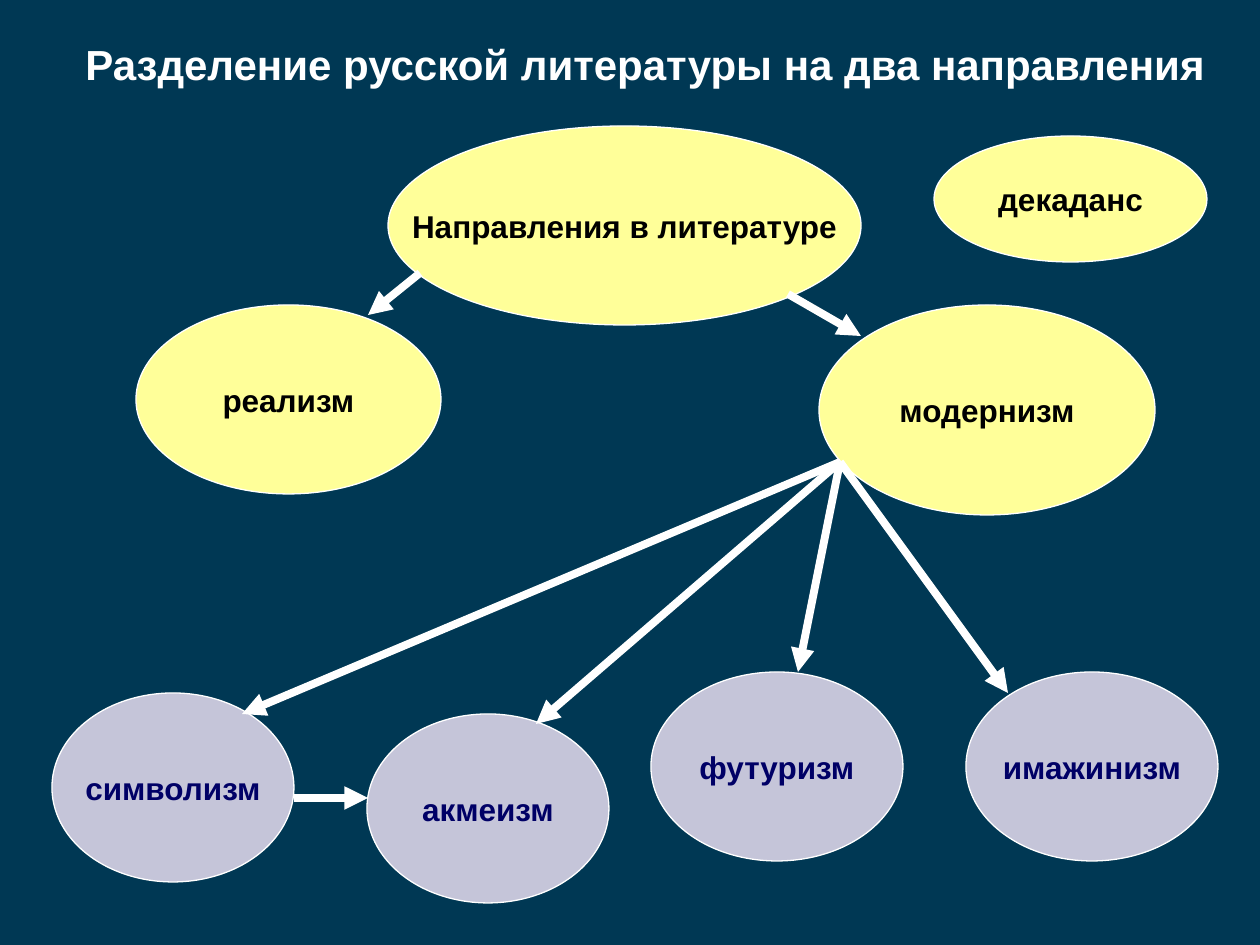
from pptx import Presentation
from pptx.dml.color import RGBColor
from pptx.enum.shapes import MSO_CONNECTOR, MSO_SHAPE
from pptx.enum.text import MSO_ANCHOR, PP_ALIGN
from pptx.oxml.ns import qn
from pptx.util import Emu, Pt
from lxml import etree

ELLIPSE = MSO_SHAPE.OVAL
STRAIGHT = MSO_CONNECTOR.STRAIGHT
MIDDLE = MSO_ANCHOR.MIDDLE
CENTER = PP_ALIGN.CENTER

EMU_PER_PX = 914400 / 126
FONT = "Arial"
COLORS = {
    "background": "003854",
    "white": "FFFFFF",
    "black": "000000",
    "yellow": "FFFF99",
    "lavender": "C5C5D9",
    "navy": "000066",
}

TITLE = "Разделение русской литературы на два направления"
DIRECTIONS = [
    ("Направления в литературе", 388, 126, 473, 199),
    ("реализм", 136, 305, 305, 189),
    ("модернизм", 819, 305, 336, 210),
]
MOVEMENTS = [
    ("символизм", 52, 693, 242, 189),
    ("акмеизм", 367, 714, 242, 189),
    ("футуризм", 651, 672, 252, 189),
    ("имажинизм", 966, 672, 252, 189),
]
DECADENCE = ("декаданс", 934, 136, 273, 126)

MODERNISM_EXIT = (840, 462)
MOVEMENT_ENTRIES = [(242, 714), (536, 724), (798, 672), (1008, 693)]
ARROWS = [
    ((420, 273), (368, 315)),
    ((788, 294), (861, 336)),
    *[(MODERNISM_EXIT, entry) for entry in MOVEMENT_ENTRIES],
    ((294, 798), (368, 798)),
]


def px(*lengths):
    return [Emu(round(length * EMU_PER_PX)) for length in lengths]


def color(name):
    return RGBColor.from_string(COLORS[name])


def set_text(shape, text, size, color_name):
    frame = shape.text_frame
    frame.word_wrap = False
    frame.text = text
    font = frame.paragraphs[0].runs[0].font
    font.name = FONT
    font.size = Pt(size)
    font.bold = True
    font.color.rgb = color(color_name)


def add_title(slide):
    box = slide.shapes.add_textbox(*px(73, 32, 1149, 113))
    set_text(box, TITLE, 24, "white")


def add_ellipse(slide, text, left, top, width, height, fill, text_color):
    shape = slide.shapes.add_shape(ELLIPSE, *px(left, top, width, height))
    shape.shadow.inherit = False
    shape.fill.solid()
    shape.fill.fore_color.rgb = color(fill)
    shape.line.color.rgb = color("white")
    shape.line.width = Pt(0.75)
    set_text(shape, text, 18, text_color)
    shape.text_frame.vertical_anchor = MIDDLE
    shape.text_frame.paragraphs[0].alignment = CENTER


def add_arrow(slide, start, end):
    arrow = slide.shapes.add_connector(STRAIGHT, *px(*start, *end))
    arrow.line.color.rgb = color("white")
    arrow.line.width = Pt(4.5)
    etree.SubElement(arrow.line._get_or_add_ln(), qn("a:tailEnd"), type="triangle")
    etree.SubElement(arrow._element.spPr, qn("a:effectLst"))


def main():
    presentation = Presentation()
    presentation.slide_width, presentation.slide_height = px(1260, 945)
    slide = presentation.slides.add_slide(presentation.slide_layouts[6])
    slide.background.fill.solid()
    slide.background.fill.fore_color.rgb = color("background")

    add_title(slide)
    for direction in DIRECTIONS:
        add_ellipse(slide, *direction, "yellow", "black")
    for movement in MOVEMENTS:
        add_ellipse(slide, *movement, "lavender", "navy")
    for start, end in ARROWS:
        add_arrow(slide, start, end)
    add_ellipse(slide, *DECADENCE, "yellow", "black")

    presentation.save("out.pptx")


if __name__ == "__main__":
    main()
